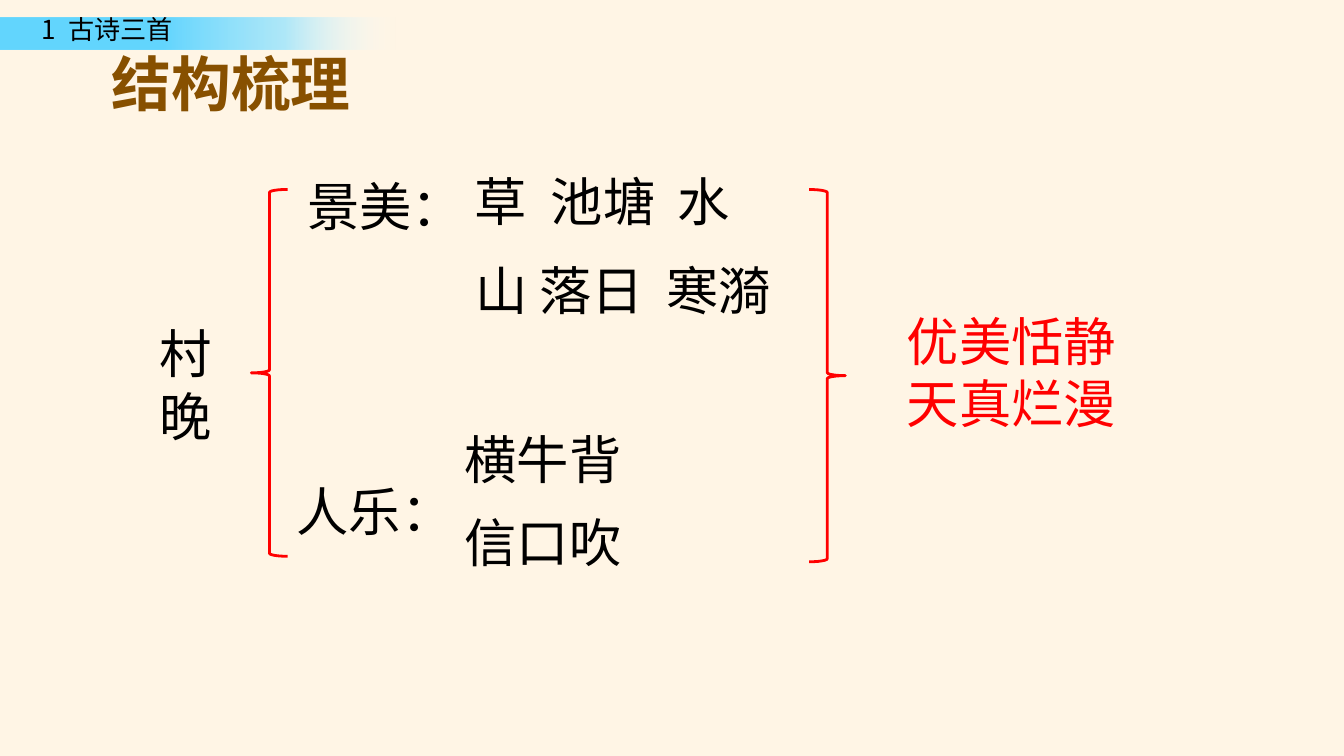
from lxml import etree
from pptx import Presentation
from pptx.dml.color import RGBColor
from pptx.enum import shapes, text
from pptx.oxml import parse_xml
from pptx.oxml.ns import nsdecls, qn
from pptx.util import Inches, Pt

FONT = "Noto Sans CJK SC"
BLACK, RED, BROWN = "000000", "FF0000", "875000"


def rgb(value):
    return RGBColor.from_string(value)


def place(sp, x, y, w, h):
    sp.left, sp.top, sp.width, sp.height = map(Inches, (x, y, w, h))


def write(sp, lines, size=28, color=BLACK, font=FONT, bold=False, tabs=()):
    """Fill a text shape with lines, aligning words at tab stops in inches."""
    tf = sp.text_frame
    tf.word_wrap = True
    tf.auto_size = text.MSO_AUTO_SIZE.NONE
    tf.vertical_anchor = text.MSO_ANCHOR.TOP
    for i, line in enumerate(lines):
        p = tf.add_paragraph() if i else tf.paragraphs[0]
        p.alignment = text.PP_ALIGN.LEFT
        if tabs:
            tab_list = etree.SubElement(p._p.get_or_add_pPr(), qn("a:tabLst"))
            for pos in tabs:
                etree.SubElement(tab_list, qn("a:tab"), pos=str(Inches(pos)), algn="l")
        r = p.add_run()
        r.text = line
        r.font.size, r.font.name, r.font.bold = Pt(size), font, bold
        r.font.color.rgb = rgb(color)
        ea = etree.SubElement(r._r.get_or_add_rPr(), qn("a:ea"))
        ea.set("typeface", FONT)


def add_text(s, x, y, w, h, *lines, **style):
    write(s.shapes.add_textbox(*map(Inches, (x, y, w, h))), lines, **style)


def add_brace(s, x, y, w, h, rotation=0):
    sp = s.shapes.add_shape(shapes.MSO_SHAPE.LEFT_BRACE, *map(Inches, (x, y, w, h)))
    sp.shadow.inherit = False
    sp.fill.background()
    sp.line.color.rgb = rgb(RED)
    sp.line.width = Pt(1.5)
    sp.rotation = rotation


def add_header(s, x, y, w, h):
    # Band that fades out to the right
    band = s.shapes.add_shape(shapes.MSO_SHAPE.RECTANGLE, *map(Inches, (x, y, w, h)))
    band.shadow.inherit = False
    band.line.fill.background()
    stops = "".join(
        f'<a:gs pos="{pos}000"><a:srgbClr val="{color}"><a:alpha val="{alpha}000"/>'
        "</a:srgbClr></a:gs>"
        for pos, color, alpha in ((40, "63D6FF", 100), (70, "97E4FF", 76), (97, "FFFFFF", 0)))
    band._element.spPr.find(qn("a:prstGeom")).addnext(parse_xml(
        f'<a:gradFill {nsdecls("a")} rotWithShape="1"><a:gsLst>{stops}</a:gsLst>'
        '<a:lin ang="0" scaled="0"/></a:gradFill>'))
    # Lesson name
    add_text(s, x + 0.21, y - 0.08, 1.3, 0.34, "1\t古诗三首", size=14, tabs=[0.2])


def add_title(s, x, y, w, h):
    title = s.shapes.title
    place(title, x, y, w, h)
    tf = title.text_frame
    tf.margin_left = tf.margin_right = Inches(0.07)
    tf.margin_top = tf.margin_bottom = Inches(0.04)
    write(title, ["结构梳理"], size=32, color=BROWN, font="Lato", bold=True)


def add_structure(s, x, y):
    # Poem name and opening brace
    add_text(s, x, y + 1.13, 0.55, 1.04, "村晚")
    add_brace(s, x + 0.78, y + 0.2, 0.27, 2.73)
    # Scenery
    add_text(s, x + 1.1, y + 0.04, 0.99, 0.57, "景美：")
    add_text(s, x + 2.34, y, 2.58, 0.57, "草\t池塘\t水", tabs=[0.57, 1.51])
    add_text(s, x + 2.35, y + 0.66, 2.73, 0.57, "山 落日\t寒漪", tabs=[1.42])
    # People
    add_text(s, x + 1.02, y + 2.31, 1.25, 0.57, "人乐：")
    for i, line in enumerate(("横牛背", "信口吹")):
        add_text(s, x + 2.27, y + 1.92 + i * 0.62, 1.48, 0.57, line)
    # Closing brace and conclusion
    add_brace(s, x + 4.93, y + 0.2, 0.27, 2.77, rotation=180)
    add_text(s, x + 5.56, y + 1.04, 1.8, 1.04, "优美恬静", "天真烂漫", color=RED)


def main():
    prs = Presentation()
    # Widescreen, 16:9
    prs.slide_width = Inches(10)
    prs.slide_height = prs.slide_width * 9 // 16
    s = prs.slides.add_slide(prs.slide_layouts[5])
    s.background.fill.solid()
    s.background.fill.fore_color.rgb = rgb("FFF5E5")
    add_header(s, 0, 0.13, 3.03, 0.24)
    add_title(s, 0.76, 0.31, 2.43, 0.61)
    add_structure(s, 1.09, 1.21)
    prs.save("out.pptx")


if __name__ == "__main__":
    main()
